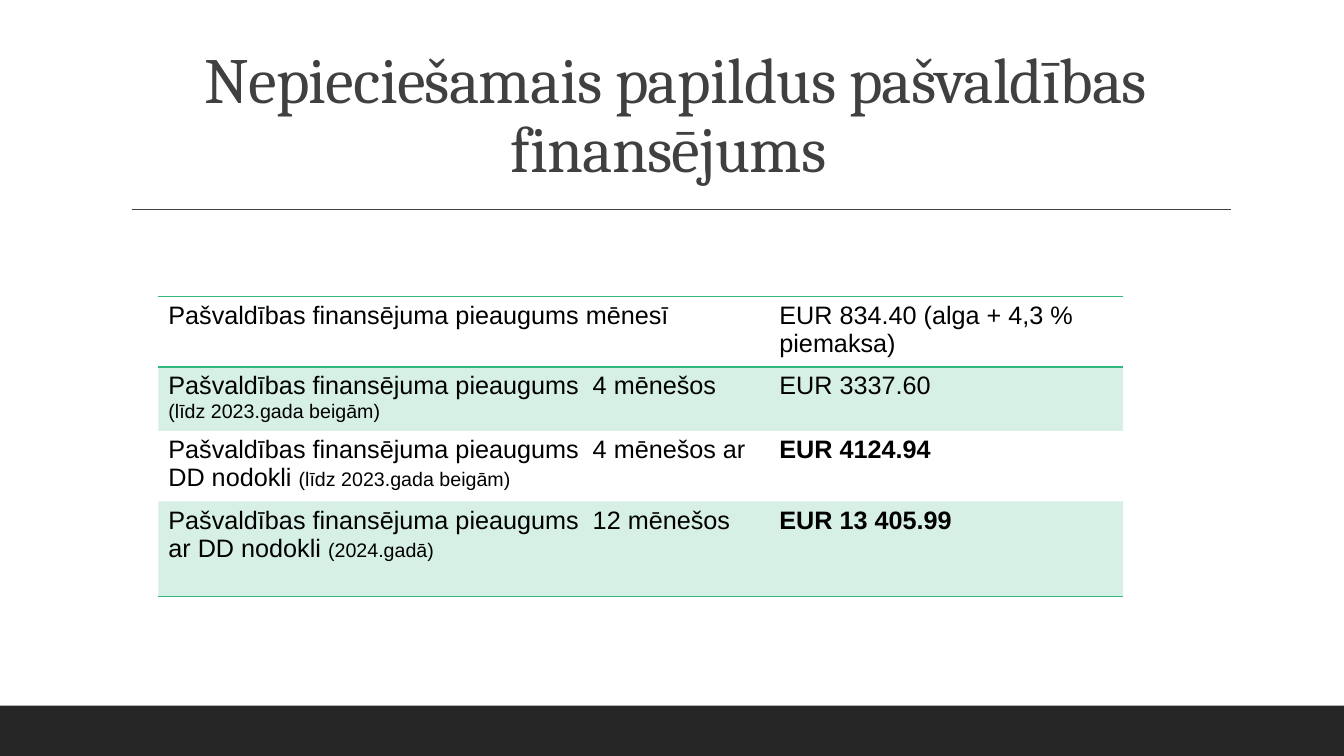
"""Build a slide with a table of the additional municipal funding needed."""
from lxml.etree import SubElement
from pptx import Presentation
from pptx.dml.color import RGBColor
from pptx.enum.shapes import MSO_CONNECTOR, MSO_SHAPE
from pptx.enum.text import MSO_ANCHOR, PP_ALIGN
from pptx.oxml.ns import qn
from pptx.util import Inches, Pt

COLORS = {"bar": "262626", "title": "404040", "text": "000000", "green": "33B67D"}
NO_GRID_STYLE = "{2D5ABB26-0587-4C30-8999-92F81FD0307C}"


def add_text(paragraph, text, size=18, font="Arial", color="text", bold=False, spacing=None):
    run = paragraph.add_run()
    run.text = text
    run.font.size = Pt(size)
    run.font.name = font
    run.font.bold = bold
    run.font.color.rgb = RGBColor.from_string(COLORS[color])
    if spacing is not None:
        run.font._element.set("spc", str(int(spacing * 100)))


def add_border(cell, side):
    line = SubElement(cell._tc.get_or_add_tcPr(), qn(f"a:ln{side}"), w=str(Pt(1)))
    fill = SubElement(line, qn("a:solidFill"))
    SubElement(fill, qn("a:srgbClr"), val=COLORS["green"])


presentation = Presentation()
presentation.slide_width = Inches(13.33)
presentation.slide_height = Inches(7.5)
slide = presentation.slides.add_slide(presentation.slide_layouts[6])

footer_bar = slide.shapes.add_shape(
    MSO_SHAPE.RECTANGLE, Inches(0), Inches(7), Inches(13.33), Inches(0.5))
footer_bar.shadow.inherit = False
footer_bar.fill.solid()
footer_bar.fill.fore_color.rgb = RGBColor.from_string(COLORS["bar"])
footer_bar.line.fill.background()

title_rule = slide.shapes.add_connector(
    MSO_CONNECTOR.STRAIGHT, Inches(1.31), Inches(2.08), Inches(12.21), Inches(2.08))
title_rule.line.color.rgb = RGBColor.from_string(COLORS["title"])
title_rule.line.width = Pt(1)
SubElement(title_rule._element.spPr, qn("a:effectLst"))

title_box = slide.shapes.add_textbox(Inches(1.2), Inches(0.31), Inches(11), Inches(1.59))
title_frame = title_box.text_frame
title_frame.word_wrap = True
title_frame.vertical_anchor = MSO_ANCHOR.BOTTOM
title_paragraph = title_frame.paragraphs[0]
title_paragraph.alignment = PP_ALIGN.CENTER
title_paragraph.line_spacing = 0.9
add_text(title_paragraph, "Nepieciešamais papildus pašvaldības finansējums ",
         size=46, font="Cambria", color="title", spacing=-0.5)

funding_rows = [
    (0.65, "Pašvaldības finansējuma pieaugums mēnesī", "",
     "EUR 834.40 (alga + 4,3 % piemaksa)", False),
    (0.6, "Pašvaldības finansējuma pieaugums  4 mēnešos ", "(līdz 2023.gada beigām)",
     "EUR 3337.60", False),
    (0.66, "Pašvaldības finansējuma pieaugums  4 mēnešos ar DD nodokli ",
     "(līdz 2023.gada beigām)", "EUR 4124.94", True),
    (0.94, "Pašvaldības finansējuma pieaugums  12 mēnešos ar DD nodokli ", "(2024.gadā)",
     "EUR 13 405.99", True),
]
border_sides = {0: "TB", len(funding_rows) - 1: "B"}

table_frame = slide.shapes.add_table(
    len(funding_rows), 2, Inches(1.57), Inches(2.94), Inches(9.57), Inches(2.85))
table = table_frame.table
table.first_row = False
table.horz_banding = False
table._tbl.tblPr.find(qn("a:tableStyleId")).text = NO_GRID_STYLE
for column, width in zip(table.columns, (6.06, 3.51)):
    column.width = Inches(width)

for index, (height, label, note, amount, bold) in enumerate(funding_rows):
    table.rows[index].height = Inches(height)
    label_cell, amount_cell = table.rows[index].cells
    add_text(label_cell.text_frame.paragraphs[0], label)
    if note:
        add_text(label_cell.text_frame.paragraphs[0], note, size=14)
    add_text(amount_cell.text_frame.paragraphs[0], amount, bold=bold)
    for cell in (label_cell, amount_cell):
        for side in border_sides.get(index, ""):
            add_border(cell, side)
        if index % 2:
            cell.fill.solid()
            cell.fill.fore_color.rgb = RGBColor.from_string(COLORS["green"])
            fill_color = cell._tc.tcPr.find(qn("a:solidFill")).find(qn("a:srgbClr"))
            SubElement(fill_color, qn("a:alpha"), val="20000")
        else:
            cell.fill.background()

presentation.save("out.pptx")
